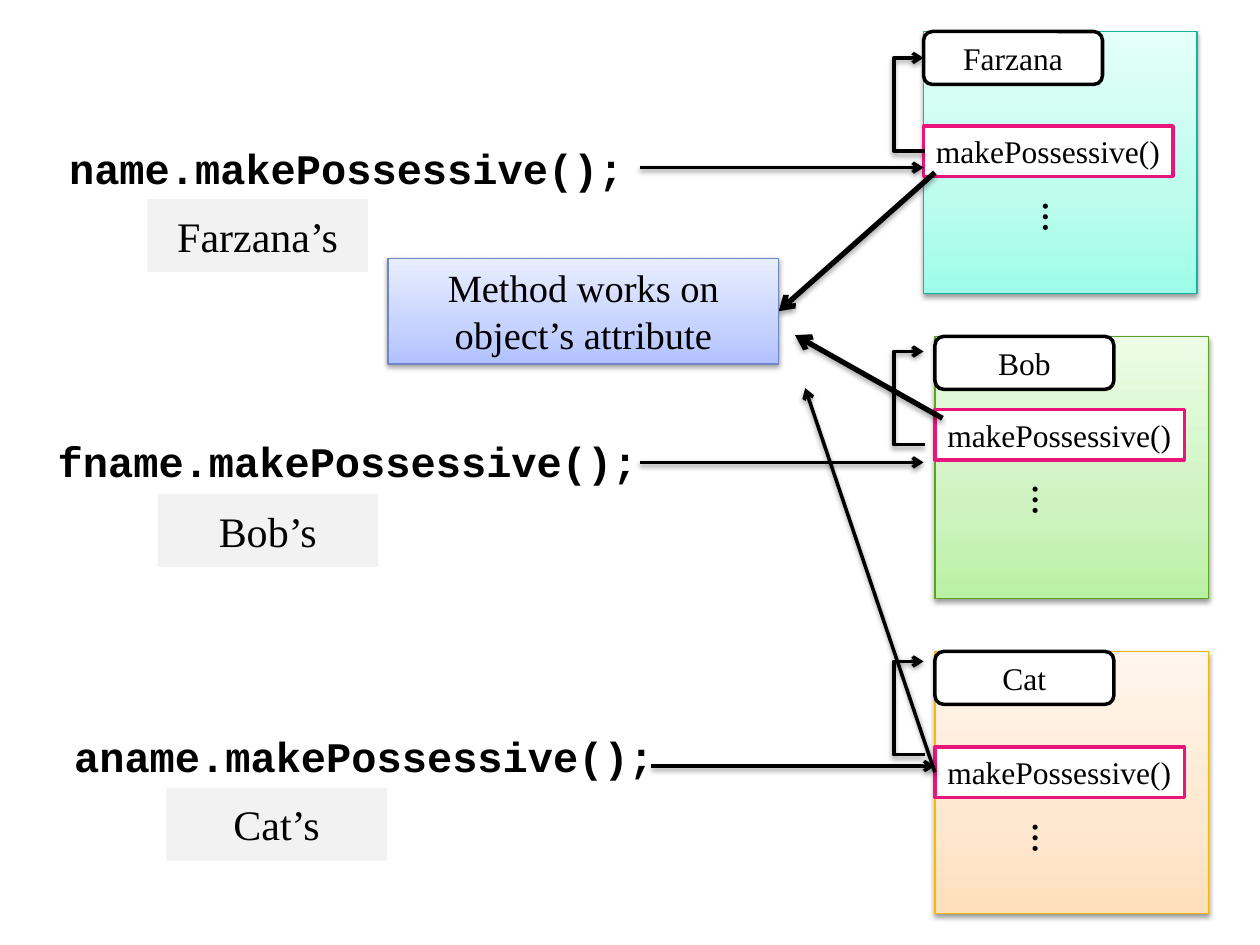
"""Build a slide showing one method working on three objects' attributes."""
import pptx
import pptx.util
import pptx.dml.color
import pptx.enum.shapes
import pptx.enum.text
import pptx.oxml
import pptx.oxml.ns

Inches = pptx.util.Inches
Pt = pptx.util.Pt
SHAPE = pptx.enum.shapes.MSO_SHAPE
CONNECTOR = pptx.enum.shapes.MSO_CONNECTOR
ALIGN = pptx.enum.text.PP_ALIGN
ANCHOR = pptx.enum.text.MSO_ANCHOR
SERIF, MONO = "Times New Roman", "Courier New"
COLORS = {
    "ink": "000000", "paper": "FFFFFF", "result": "F2F2F2", "method": "EA157A",
    "teal": ("9DFDE8", "BBFCED", "E4FFF9"), "teal_edge": "16B39E",
    "green": ("B9F1A4", "CEF3C0", "ECFCE6"), "green_edge": "5CA122",
    "orange": ("FFDFBC", "FFE8D0", "FFF6ED"), "orange_edge": "FEB604",
    "blue": ("B0C1FF", "C6D2FF", "E9EEFF"), "blue_edge": "6E86C6",
}


def rgb(name):
    """Return the named colour."""
    return pptx.dml.color.RGBColor.from_string(COLORS[name])


def element(xml):
    """Parse a drawing element whose root tag uses the a: prefix."""
    tag, rest = xml.split(" ", 1)
    return pptx.oxml.parse_xml(f"{tag} {pptx.oxml.ns.nsdecls('a')} {rest}")


class SlideBuilder:
    """Hold the style and the current slide."""

    def __init__(self, slide):
        """Keep the slide to draw on."""
        self.slide = slide

    def add_text(self, frame, text, size, font=SERIF, bold=False, align=None,
                 anchor=ANCHOR.TOP, wrap=True, grow=False):
        """Put one run of text in a frame."""
        frame.word_wrap = wrap
        frame.vertical_anchor = anchor
        if grow:
            frame.auto_size = pptx.enum.text.MSO_AUTO_SIZE.SHAPE_TO_FIT_TEXT
        paragraph = frame.paragraphs[0]
        paragraph.alignment = align or ALIGN.LEFT
        run = paragraph.add_run()
        run.text = text
        run.font.size = Pt(size)
        run.font.name = font
        run.font.bold = bold
        run.font.color.rgb = rgb("ink")

    def cast_shadow(self, effects, alpha=38, distance=1.6):
        """Add a soft downward shadow to an effect list."""
        effects.append(element(
            f'<a:outerShdw blurRad="{Pt(3.1)}" dist="{Pt(distance)}" dir="5400000" '
            f'rotWithShape="0"><a:srgbClr val="{COLORS["ink"]}">'
            f'<a:alpha val="{alpha * 1000}"/></a:srgbClr></a:outerShdw>'))

    def box(self, left, top, width, height, fill, edge=None, weight=2,
            kind=SHAPE.RECTANGLE):
        """Draw a plain box."""
        shape = self.slide.shapes.add_shape(
            kind, Inches(left), Inches(top), Inches(width), Inches(height))
        shape.shadow.inherit = False
        shape.fill.solid()
        shape.fill.fore_color.rgb = rgb(fill)
        if edge:
            shape.line.color.rgb = rgb(edge)
            shape.line.width = Pt(weight)
        else:
            shape.line.fill.background()
        return shape

    def gradient_box(self, left, top, width, height, hue):
        """Draw a shadowed box that fades upwards."""
        shape = self.box(left, top, width, height, "paper", hue + "_edge", 0.75)
        stops = "".join(
            f'<a:gs pos="{position * 1000}"><a:srgbClr val="{color}"/></a:gs>'
            for position, color in zip((0, 35, 100), COLORS[hue]))
        properties = shape._element.spPr
        solid = properties.find(pptx.oxml.ns.qn("a:solidFill"))
        properties.replace(solid, element(
            f'<a:gradFill rotWithShape="1"><a:gsLst>{stops}</a:gsLst>'
            '<a:lin ang="16200000" scaled="0"/></a:gradFill>'))
        self.cast_shadow(properties.find(pptx.oxml.ns.qn("a:effectLst")))
        return shape

    def label(self, left, top, width, height, text, size, font=SERIF, vertical=False):
        """Place bold free text."""
        textbox = self.slide.shapes.add_textbox(
            Inches(left), Inches(top), Inches(width), Inches(height))
        self.add_text(textbox.text_frame, text, size, font, bold=True, wrap=False, grow=True)
        if vertical:
            textbox.text_frame._txBody.bodyPr.set("vert", "vert")

    def arrow(self, start, end, weight=2, kind=CONNECTOR.STRAIGHT, **shadow):
        """Draw a shadowed arrow."""
        line = self.slide.shapes.add_connector(
            kind, *(Inches(value) for value in (*start, *end)))
        line.line.color.rgb = rgb("ink")
        line.line.width = Pt(weight)
        line.line._get_or_add_ln().append(element('<a:tailEnd type="arrow"/>'))
        effects = element("<a:effectLst />")
        line._element.spPr.append(effects)
        self.cast_shadow(effects, **shadow)
        return line

    def loop(self, left, bottom, top, reach=0.25):
        """Draw an elbow arrow that bulges left from method to attribute."""
        depth = 0.01
        line = self.arrow((left + depth, bottom), (left, top), kind=CONNECTOR.ELBOW)
        bend = round(reach / depth * 100000)
        guides = line._element.spPr.find(".//" + pptx.oxml.ns.qn("a:avLst"))
        guides.append(element(f'<a:gd name="adj1" fmla="val {bend}"/>'))

    def object_panel(self, left, top, hue, name, method_top, dots_left):
        """Draw an object with its attribute and method."""
        self.gradient_box(left, top, 2.17, 2.08, hue)
        attribute = self.box(left, top, 1.42, 0.42, "paper", "ink",
                             kind=SHAPE.ROUNDED_RECTANGLE)
        self.add_text(attribute.text_frame, name, 18, align=ALIGN.CENTER,
                      anchor=ANCHOR.MIDDLE)
        method = self.box(left, method_top, 1.98, 0.4, "paper", "method")
        self.add_text(method.text_frame, "makePossessive()", 18, wrap=False, grow=True)
        self.label(dots_left, method_top + 0.5, 0.5, 0.28, "…", 18, vertical=True)

    def result(self, left, top, text):
        """Draw the value that a call gives."""
        shape = self.box(left, top, 1.75, 0.58, "result")
        self.add_text(shape.text_frame, text, 24, align=ALIGN.CENTER, anchor=ANCHOR.MIDDLE)

    def callout(self, left, top, width, height, text):
        """Draw the explanation."""
        shape = self.gradient_box(left, top, width, height, "blue")
        self.add_text(shape.text_frame, text, 22, align=ALIGN.CENTER, grow=True)


def main():
    """Build and save the slide."""
    deck = pptx.Presentation()
    deck.slide_width, deck.slide_height = Inches(10), Inches(7.5)
    builder = SlideBuilder(deck.slides.add_slide(deck.slide_layouts[6]))

    calls = [
        (0.45, 1.08, 4.64, "name"),
        (0.36, 3.41, 4.84, "fname"),
        (0.49, 5.75, 4.84, "aname"),
    ]
    panels = [
        (7.33, 0.25, "teal", "Farzana", 1, 8.08),
        (7.42, 2.67, "green", "Bob", 3.25, 8),
        (7.42, 5.17, "orange", "Cat", 5.93, 8),
    ]
    results = [(1.17, 1.58), (1.25, 3.92), (1.32, 6.25)]
    call_arrows = [(5.08, 1.33), (5.08, 3.67), (5.17, 6.08)]
    loop_tops = [0.46, 2.79, 5.25]

    for left, top, width, variable in calls:
        builder.label(left, top, width, 0.5, f"{variable}.makePossessive();", 24, MONO)
    for panel in panels:
        builder.object_panel(*panel)
    for (left, top), panel in zip(results, panels):
        builder.result(left, top, f"{panel[3]}’s")
    for (left, y), loop_top in zip(call_arrows, loop_tops):
        builder.arrow((left, y), (left + 2.25, y))
        builder.loop(7.33, loop_top + 0.74, loop_top)

    for start, end in [((7.42, 1.37), (6.18, 2.47)), ((7.48, 3.32), (6.31, 2.66))]:
        builder.arrow(start, end, weight=3, alpha=35, distance=1.8)
    builder.callout(3.08, 2.05, 3.1, 0.84, "Method works on object’s attribute")
    builder.arrow((7.42, 6.13), (6.39, 3.08))
    deck.save("out.pptx")


if __name__ == "__main__":
    main()
